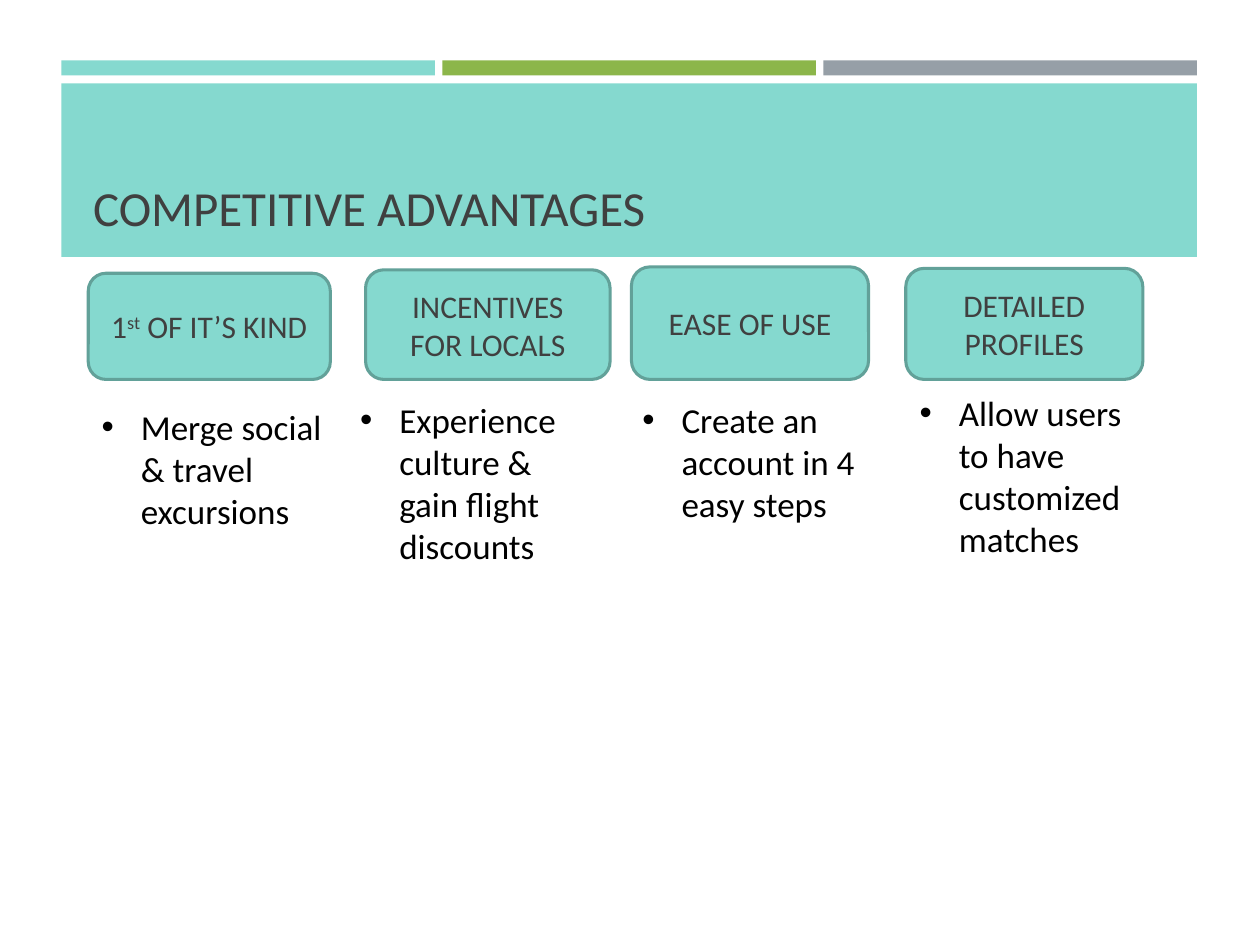
from lxml import etree
from pptx import Presentation
from pptx.dml.color import RGBColor
from pptx.enum import shapes, text
from pptx.oxml import ns
from pptx.util import Cm, Pt

COLORS = {
    "teal": "85D9CF",
    "green": "8CB64A",
    "gray": "969FA7",
    "outline": "62A199",
    "heading": "404040",
    "body": "000000",
}
FORMATS = {
    "title": {"size": Pt(28), "color": "heading"},
    "card": {"size": Pt(18), "color": "heading"},
    "note": {"size": Pt(20), "color": "body"},
}
CARD_BOTTOM = 7.65
ADVANTAGES = [
    ([("1", 0), ("st", 30000), (" OF IT’S KIND", 0)], (1.78, 5.51, 4.88),
     "Merge social & travel excursions", (1.8, 8.05, 5.21, 4.19)),
    ([("INCENTIVES FOR LOCALS", 0)], (7.37, 5.44, 4.93),
     "Experience culture & gain flight discounts", (7.01, 7.9, 4.65, 5.05)),
    ([("EASE OF USE", 0)], (12.73, 5.38, 4.78),
     "Create an account in 4 easy steps", (12.7, 7.9, 4.8, 4.19)),
    ([("DETAILED PROFILES", 0)], (18.26, 5.41, 4.78),
     "Allow users to have customized matches", (18.29, 7.77, 4.8, 4.37)),
]


def rgb(name):
    return RGBColor.from_string(COLORS[name])


def add_run(paragraph, words, style, baseline=0):
    run = paragraph.add_run()
    run.text = words
    run.font.color.rgb = rgb(FORMATS[style]["color"])
    for attribute, value in {"name": "Calibri", "size": FORMATS[style]["size"]}.items():
        setattr(run.font, attribute, value)
    if baseline:
        run.font._element.set("baseline", str(baseline))


def add_panel(slide, preset, box, color):
    panel = slide.shapes.add_shape(preset, *map(Cm, box))
    panel.shadow.inherit = False
    panel.fill.solid()
    panel.fill.fore_color.rgb = rgb(color)
    panel.line.fill.background()
    return panel


def add_words(slide, box, anchor):
    frame = slide.shapes.add_textbox(*map(Cm, box)).text_frame
    for attribute, value in {"word_wrap": True, "vertical_anchor": anchor}.items():
        setattr(frame, attribute, value)
    return frame.paragraphs[0]


def add_header(slide, box):
    left, top, width, height = box
    gap, bar_height = 0.15, 0.3
    bar_width = (width - 2 * gap) / 3
    for index, color in enumerate(("teal", "green", "gray")):
        bar = (left + index * (bar_width + gap), top, bar_width, bar_height)
        add_panel(slide, shapes.MSO_SHAPE.RECTANGLE, bar, color)
    offset = bar_height + 0.16
    banner = (left, top + offset, width, height - offset)
    add_panel(slide, shapes.MSO_SHAPE.RECTANGLE, banner, "teal")
    title_box = (left + 0.39, top + 0.69, width - 0.69, height - 0.97)
    title = add_words(slide, title_box, text.MSO_ANCHOR.BOTTOM)
    add_run(title, "COMPETITIVE ADVANTAGES", "title")


def add_card(slide, box, heading):
    card = add_panel(slide, shapes.MSO_SHAPE.ROUNDED_RECTANGLE, box, "teal")
    card.line.color.rgb = rgb("outline")
    card.line.width = Pt(1.75)
    card.text_frame.vertical_anchor = text.MSO_ANCHOR.MIDDLE
    paragraph = card.text_frame.paragraphs[0]
    paragraph.alignment = text.PP_ALIGN.CENTER
    for words, baseline in heading:
        add_run(paragraph, words, "card", baseline)


def add_note(slide, box, words):
    paragraph = add_words(slide, box, text.MSO_ANCHOR.TOP)
    add_run(paragraph, words, "note")
    properties = paragraph._p.get_or_add_pPr()
    for attribute, value in {"marL": Cm(0.79), "indent": -Cm(0.79)}.items():
        properties.set(attribute, str(int(value)))
    etree.SubElement(properties, ns.qn("a:buFont"), typeface="Arial")
    etree.SubElement(properties, ns.qn("a:buChar"), char="•")


def main():
    deck = Presentation()
    deck.slide_width, deck.slide_height = Cm(25.4), Cm(19.05)
    slide = deck.slides.add_slide(deck.slide_layouts[6])
    add_header(slide, (1.24, 1.22, 22.89, 3.96))
    for heading, (left, top, width), note, note_box in ADVANTAGES:
        add_card(slide, (left, top, width, CARD_BOTTOM - top), heading)
        add_note(slide, note_box, note)
    deck.save("out.pptx")


if __name__ == "__main__":
    main()
